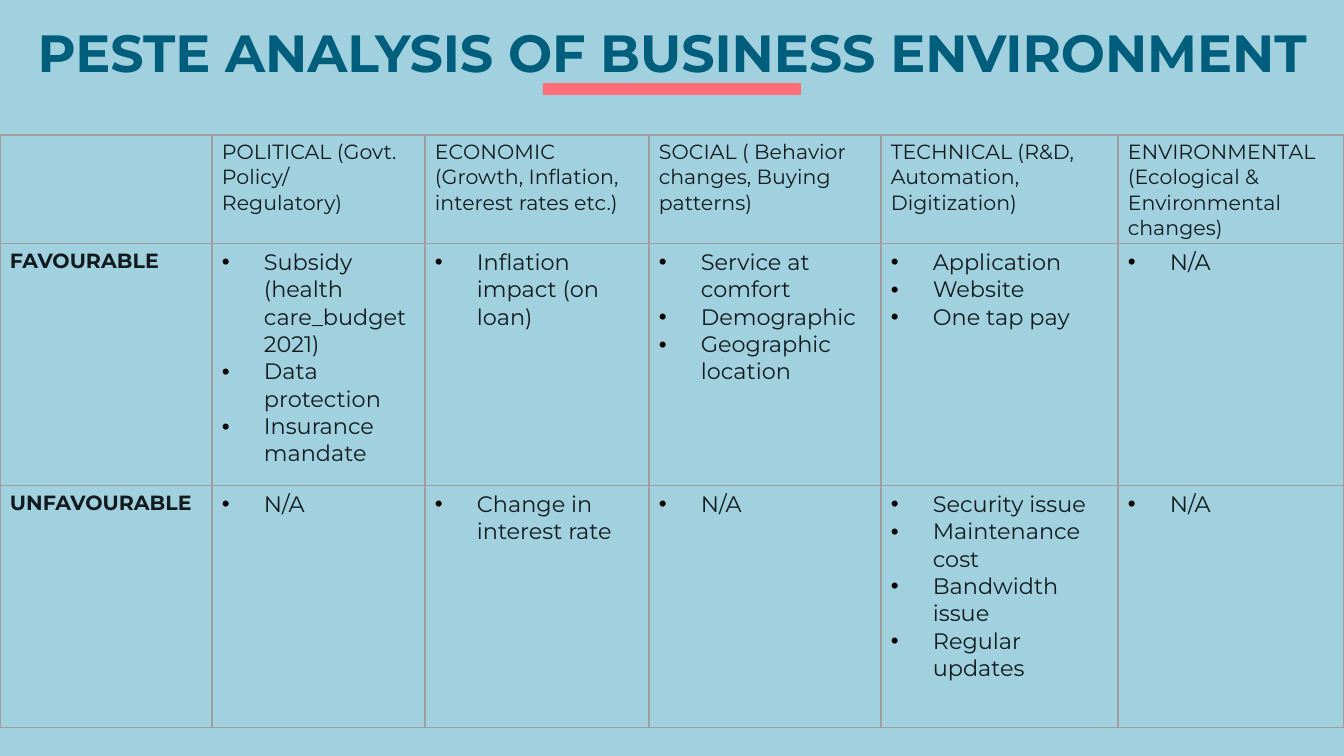
from lxml import etree
from pptx import Presentation
from pptx import util as u
from pptx.dml.color import RGBColor
from pptx.enum import shapes, text
from pptx.oxml.ns import qn

PX = 914400 / 134.4
WIDTH, HEIGHT = 1344, 756
SKY = RGBColor(0xA1, 0xD1, 0xDE)
TEAL = RGBColor(0x00, 0x5E, 0x7D)
CORAL = RGBColor(0xFC, 0x6D, 0x78)
INK = RGBColor(0x11, 0x1A, 0x1F)
BLACK = RGBColor(0x00, 0x00, 0x00)
GRID = RGBColor(0x9E, 0x9E, 0x9E)

COLUMNS = [212, 213, 224, 232, 237, 226]
ROWS = [103, 242, 242]
HEADINGS = [
    "",
    "POLITICAL (Govt. Policy/ Regulatory)",
    "ECONOMIC (Growth, Inflation, interest rates etc.)",
    "SOCIAL ( Behavior changes, Buying patterns)",
    "TECHNICAL (R&D, Automation, Digitization)",
    "ENVIRONMENTAL (Ecological & Environmental changes)",
]
FACTORS = {
    "FAVOURABLE": [
        ["Subsidy (health care_budget2021)", "Data protection", "Insurance mandate"],
        ["Inflation impact (on loan)"],
        ["Service at comfort", "Demographic", "Geographic location"],
        ["Application", "Website", "One tap pay"],
        ["N/A"],
    ],
    "UNFAVOURABLE": [
        ["N/A"],
        ["Change in interest rate"],
        ["N/A"],
        ["Security issue", "Maintenance cost", "Bandwidth issue", "Regular updates"],
        ["N/A"],
    ],
}


def px(n):
    return u.Emu(round(n * PX))


def add_color(parent, tag, color):
    holder = etree.SubElement(parent, qn(tag))
    etree.SubElement(holder, qn("a:srgbClr"), val=str(color))


def add_bullet(p, indent=42):
    pPr = p._p.get_or_add_pPr()
    pPr.set("marL", str(px(indent)))
    pPr.set("indent", str(-px(indent)))
    add_color(pPr, "a:buClr", BLACK)
    etree.SubElement(pPr, qn("a:buFont"), typeface="Arial")
    etree.SubElement(pPr, qn("a:buChar"), char="•")


def add_borders(cell):
    tcPr = cell._tc.get_or_add_tcPr()
    for side in ("a:lnL", "a:lnR", "a:lnT", "a:lnB"):
        line = etree.SubElement(tcPr, qn(side), w=str(u.Pt(0.75)))
        add_color(line, "a:solidFill", GRID)


def write(p, words, size=11, color=INK, bold=False):
    r = p.add_run()
    r.text = words
    r.font.name = "Montserrat"
    r.font.size = u.Pt(size)
    r.font.bold = bold
    r.font.color.rgb = color


class Deck:
    """Holds the style and the current slide."""

    def __init__(self):
        self.prs = Presentation()
        self.prs.slide_width, self.prs.slide_height = px(WIDTH), px(HEIGHT)
        self.s = self.prs.slides.add_slide(self.prs.slide_layouts[5])
        self.s.background.fill.solid()
        self.s.background.fill.fore_color.rgb = SKY

    def title(self, words, x, y, w, h):
        sp = self.s.shapes.title
        sp.left, sp.top, sp.width, sp.height = map(px, (x, y, w, h))
        tf = sp.text_frame
        tf.margin_left = tf.margin_top = tf.margin_right = tf.margin_bottom = 0
        tf.word_wrap = True
        tf.auto_size = text.MSO_AUTO_SIZE.SHAPE_TO_FIT_TEXT
        tf.vertical_anchor = text.MSO_ANCHOR.TOP
        p = tf.paragraphs[0]
        p.alignment = text.PP_ALIGN.CENTER
        write(p, words, size=28, color=TEAL, bold=True)

    def bar(self, x, y, w, h):
        sp = self.s.shapes.add_shape(shapes.MSO_SHAPE.RECTANGLE, *map(px, (x, y, w, h)))
        sp.shadow.inherit = False
        sp.fill.solid()
        sp.fill.fore_color.rgb = CORAL
        sp.line.fill.background()

    def table(self, x, y, columns, rows):
        """Add an empty ruled table and return it."""
        frame = self.s.shapes.add_table(
            len(rows), len(columns), *map(px, (x, y, sum(columns), sum(rows))))
        table = frame.table
        table.first_row = table.horz_banding = False
        for column, width in zip(table.columns, columns):
            column.width = px(width)
        for row, height in zip(table.rows, rows):
            row.height = px(height)
        for cell in table.iter_cells():
            cell.margin_left = cell.margin_right = px(10)
            cell.margin_top = cell.margin_bottom = px(5)
            add_borders(cell)
            cell.fill.background()
        return table

    def cell(self, cell, lines, bulleted=False, **style):
        tf = cell.text_frame
        for i, line in enumerate(lines):
            p = tf.add_paragraph() if i else tf.paragraphs[0]
            if bulleted:
                add_bullet(p)
            write(p, line, **style)


def main():
    deck = Deck()
    deck.title("PESTE ANALYSIS OF BUSINESS ENVIRONMENT", 0, 20, WIDTH, 63)
    table = deck.table(0, 135, COLUMNS, ROWS)
    for c, heading in enumerate(HEADINGS):
        if heading:
            deck.cell(table.cell(0, c), [heading])
    for r, (label, groups) in enumerate(FACTORS.items(), 1):
        deck.cell(table.cell(r, 0), [label], bold=True)
        for c, items in enumerate(groups, 1):
            deck.cell(table.cell(r, c), items, bulleted=True, size=12)
    deck.bar(543, 83, 258, 12)
    deck.prs.save("out.pptx")


if __name__ == "__main__":
    main()
